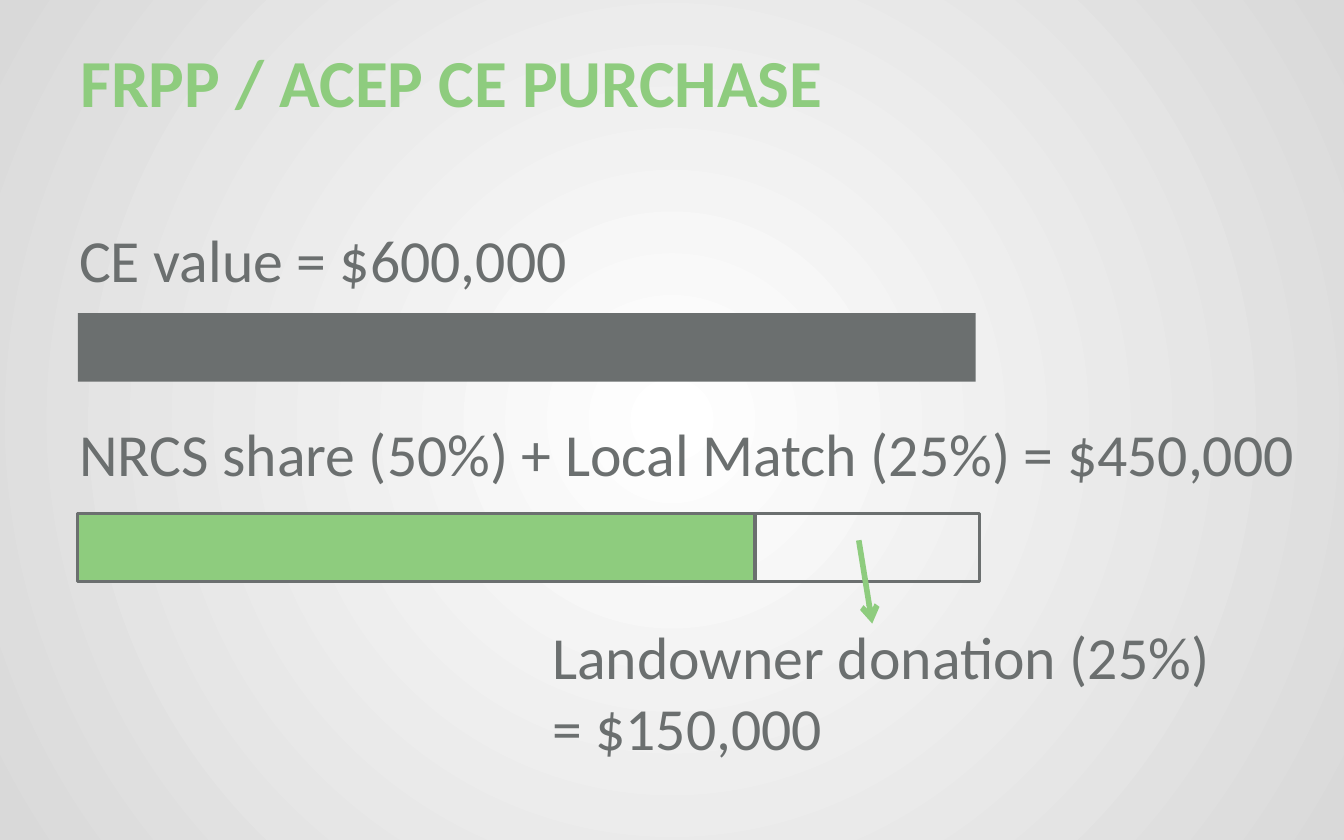
from pptx import Presentation
from pptx.dml.color import RGBColor
from pptx.enum.shapes import MSO_CONNECTOR as Connector, MSO_SHAPE as Shape
from pptx.enum.text import MSO_ANCHOR as Anchor, MSO_AUTO_SIZE as AutoSize
from pptx.oxml import parse_xml
from pptx.oxml.ns import nsdecls, qn
from pptx.util import Pt

PX = 9144  # EMU: 100 px to the inch
GREEN, GRAY = "8ECC7E", "6B6F6F"
BACKGROUND = ["FFFFFF", "D9D9D9"]  # centre, rim

TITLE = ("FRPP / ACEP CE PURCHASE", (50, 25, 900, 104))
LABELS = [
    ("CE value = $600,000", (49, 161, 400, 64)),
    ("NRCS share (50%) + Local Match (25%) = $450,000", (49, 305, 947, 64)),
    ("Landowner donation (25%)\n= $150,000", (401, 456, 524, 118)),
]
BAR_HEIGHT = 51
BARS = [  # left, top, width, fill, outline
    (58, 233, 668, GRAY, None),
    (58, 382, 504, GREEN, GRAY),
    (561, 382, 168, None, GRAY),
]
ARROW = (639, 402, 649, 464)


def emu(lengths):
    return [length * PX for length in lengths]


def color(hex_string):
    return RGBColor.from_string(hex_string)


def paint_background(page):
    """Fill the page with a gradient that spreads in circles from the centre."""
    fill = page.background.fill
    fill.gradient()
    for stop, shade in zip(fill.gradient_stops, BACKGROUND):
        stop.color.rgb = color(shade)
    gradient = next(page.element.iter(qn("a:gradFill")))
    gradient.replace(gradient.find(qn("a:lin")), parse_xml(
        f'<a:path {nsdecls("a")} path="circle">'
        '<a:fillToRect l="50000" t="50000" r="50000" b="50000"/></a:path>'))


def add_text(page, text, place, frame_format, font_format, shade):
    frame = page.shapes.add_textbox(*emu(place)).text_frame
    for name, value in frame_format.items():
        setattr(frame, name, value)
    para = frame.paragraphs[0]
    para.text = text
    for span in para.runs:
        for name, value in font_format.items():
            setattr(span.font, name, value)
        span.font.color.rgb = color(shade)


def add_bar(page, left, top, width, fill, outline):
    bar = page.shapes.add_shape(Shape.RECTANGLE, *emu((left, top, width, BAR_HEIGHT)))
    bar.shadow.inherit = False
    if fill:
        bar.fill.solid()
        bar.fill.fore_color.rgb = color(fill)
    else:
        bar.fill.background()
    if outline:
        bar.line.color.rgb = color(outline)
        bar.line.width = Pt(1.5)
    else:
        bar.line.fill.background()


def add_arrow(page, ends, shade):
    arrow = page.shapes.add_connector(Connector.STRAIGHT, *emu(ends))
    arrow.line.color.rgb = color(shade)
    arrow.line.width = Pt(3)
    properties = arrow.element.spPr
    properties.find(qn("a:ln")).append(parse_xml(f'<a:tailEnd {nsdecls("a")} type="arrow"/>'))
    properties.append(parse_xml(f'<a:effectLst {nsdecls("a")}/>'))


def main():
    deck = Presentation()
    deck.slide_width, deck.slide_height = emu((1000, 625))
    page = deck.slides.add_slide(deck.slide_layouts[6])
    paint_background(page)
    add_text(page, *TITLE, {"word_wrap": True, "vertical_anchor": Anchor.TOP},
             {"name": "Calibri", "size": Pt(36), "bold": True}, GREEN)
    for bar in BARS:
        add_bar(page, *bar)
    for label in LABELS:
        add_text(page, *label, {"word_wrap": False, "auto_size": AutoSize.SHAPE_TO_FIT_TEXT},
                 {"name": "Calibri", "size": Pt(32)}, GRAY)
    add_arrow(page, ARROW, GREEN)
    deck.save("out.pptx")


if __name__ == "__main__":
    main()
